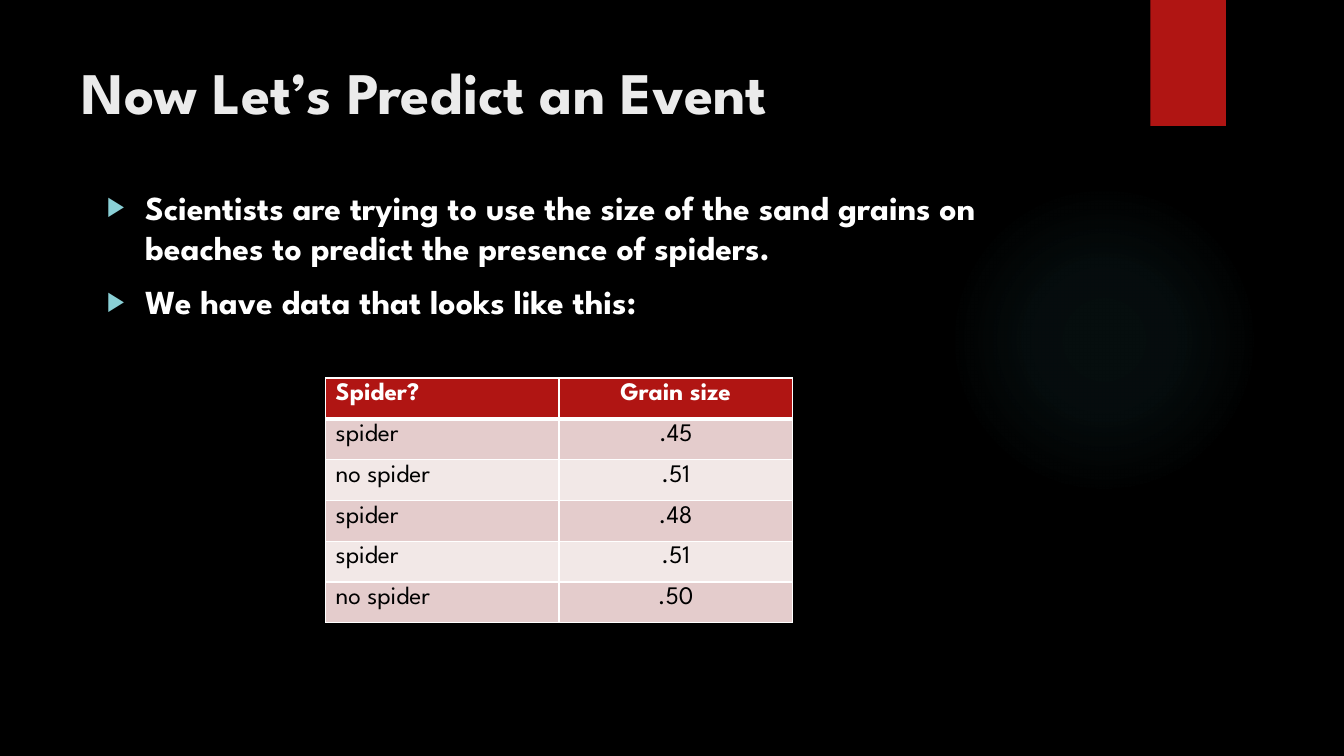
from lxml.etree import SubElement
from pptx import Presentation
from pptx.dml.color import RGBColor
from pptx.enum.shapes import MSO_SHAPE
from pptx.enum.text import MSO_ANCHOR, MSO_AUTO_SIZE, PP_ALIGN
from pptx.oxml import parse_xml
from pptx.oxml.ns import nsdecls, qn
from pptx.util import Inches, Pt

TITLE = "Now Let’s Predict an Event"
BULLETS = [
    "Scientists are trying to use the size of the sand grains on beaches "
    "to predict the presence of spiders.",
    "We have data that looks like this:",
]
ROWS = [
    ("Spider?", "Grain size"),
    ("spider", ".45"),
    ("no spider", ".51"),
    ("spider", ".48"),
    ("spider", ".51"),
    ("no spider", ".50"),
]
FONT = "League Spartan"
COLORS = {
    "background": "000000",
    "glow": "50B9C1",
    "accent": "B01513",
    "title": "EBEBEB",
    "white": "FFFFFF",
    "black": "000000",
    "bullet": "8AD0D6",
    "odd row": "E4CCCC",
    "even row": "F2E8E7",
}
GLOW_STOPS = [(0, 7), (36, 6), (69, 0)]  # position and opacity, percent


def color(name):
    return RGBColor.from_string(COLORS[name])


def place(shape, left, top, width, height):
    shape.left, shape.top = Inches(left), Inches(top)
    shape.width, shape.height = Inches(width), Inches(height)


def add_run(paragraph, text, size, color_name, bold=True):
    run = paragraph.add_run()
    run.text = text
    run.font.name = FONT
    run.font.size = Pt(size)
    run.font.bold = bold
    run.font.color.rgb = color(color_name)


def add_backdrop(slide, preset, left, top, width, height):
    """Add a plain shape behind the placeholders."""
    shape = slide.shapes.add_shape(
        preset, Inches(left), Inches(top), Inches(width), Inches(height))
    shape.shadow.inherit = False
    shape.line.fill.background()
    shape.fill.solid()
    shape.fill.fore_color.rgb = color("accent")
    slide.shapes.title.element.addprevious(shape.element)
    return shape


def set_glow(shape):
    """Replace the solid fill by a radial fade."""
    stops = "".join(
        f'<a:gs pos="{position * 1000}"><a:srgbClr val="{COLORS["glow"]}">'
        f'<a:alpha val="{opacity * 1000}"/></a:srgbClr></a:gs>'
        for position, opacity in GLOW_STOPS)
    gradient = parse_xml(
        f'<a:gradFill {nsdecls("a")} rotWithShape="1"><a:gsLst>{stops}</a:gsLst>'
        '<a:path path="circle"><a:fillToRect l="50000" t="50000" r="50000" '
        'b="50000"/></a:path></a:gradFill>')
    properties = shape.element.spPr
    properties.replace(properties.find(qn("a:solidFill")), gradient)


def set_bullet(paragraph):
    properties = paragraph._p.get_or_add_pPr()
    properties.set("marL", str(Inches(0.38)))
    properties.set("indent", str(-Inches(0.38)))
    bullet_color = SubElement(properties, qn("a:buClr"))
    SubElement(bullet_color, qn("a:srgbClr"), val=COLORS["bullet"])
    SubElement(properties, qn("a:buSzPct"), val="80000")
    SubElement(properties, qn("a:buFont"), typeface="Arial")
    SubElement(properties, qn("a:buChar"), char="▶")


def set_borders(cell, top, bottom):
    """Draw white borders; top and bottom are widths in points."""
    properties = cell._tc.get_or_add_tcPr()
    widths = {"lnL": 1, "lnR": 1, "lnT": top, "lnB": bottom}
    for index, (side, width) in enumerate(widths.items()):
        properties.insert(index, parse_xml(
            f'<a:{side} {nsdecls("a")} w="{Pt(width)}"><a:solidFill>'
            f'<a:srgbClr val="{COLORS["white"]}"/></a:solidFill></a:{side}>'))


def fill_title(title):
    place(title, 0.71, 0.5, 10.29, 1.53)
    frame = title.text_frame
    frame.auto_size = MSO_AUTO_SIZE.NONE
    frame.vertical_anchor = MSO_ANCHOR.TOP
    paragraph = frame.paragraphs[0]
    paragraph.alignment = PP_ALIGN.LEFT
    add_run(paragraph, TITLE, 42, "title")


def fill_body(body):
    place(body, 0.96, 1.8, 9.78, 4.59)
    frame = body.text_frame
    frame.auto_size = MSO_AUTO_SIZE.NONE
    frame.vertical_anchor = MSO_ANCHOR.TOP
    for index, text in enumerate(BULLETS):
        paragraph = frame.add_paragraph() if index else frame.paragraphs[0]
        set_bullet(paragraph)
        paragraph.space_before = Pt(10 if index else 0)
        add_run(paragraph, text, 24, "white")


def add_grain_table(slide):
    table = slide.shapes.add_table(
        len(ROWS), len(ROWS[0]),
        Inches(3.23), Inches(3.75), Inches(4.63), Inches(2.43)).table
    for row, values in enumerate(ROWS):
        header = row == 0
        fill = "accent" if header else "odd row" if row % 2 else "even row"
        for column, text in enumerate(values):
            cell = table.cell(row, column)
            cell.fill.solid()
            cell.fill.fore_color.rgb = color(fill)
            set_borders(cell, 3 if row == 1 else 1, 3 if header else 1)
            paragraph = cell.text_frame.paragraphs[0]
            paragraph.alignment = PP_ALIGN.CENTER if column else PP_ALIGN.LEFT
            add_run(paragraph, text, 18, "white" if header else "black", header)


def main():
    presentation = Presentation()
    presentation.slide_width = Inches(13.33)
    presentation.slide_height = Inches(7.5)
    slide = presentation.slides.add_slide(presentation.slide_layouts[1])
    slide.background.fill.solid()
    slide.background.fill.fore_color.rgb = color("background")
    set_glow(add_backdrop(slide, MSO_SHAPE.OVAL, 9.41, 1.83, 3.08, 3.08))
    add_backdrop(slide, MSO_SHAPE.RECTANGLE, 11.41, 0, 0.75, 1.25)
    fill_title(slide.shapes.title)
    fill_body(slide.placeholders[1])
    add_grain_table(slide)
    presentation.save("out.pptx")


if __name__ == "__main__":
    main()
